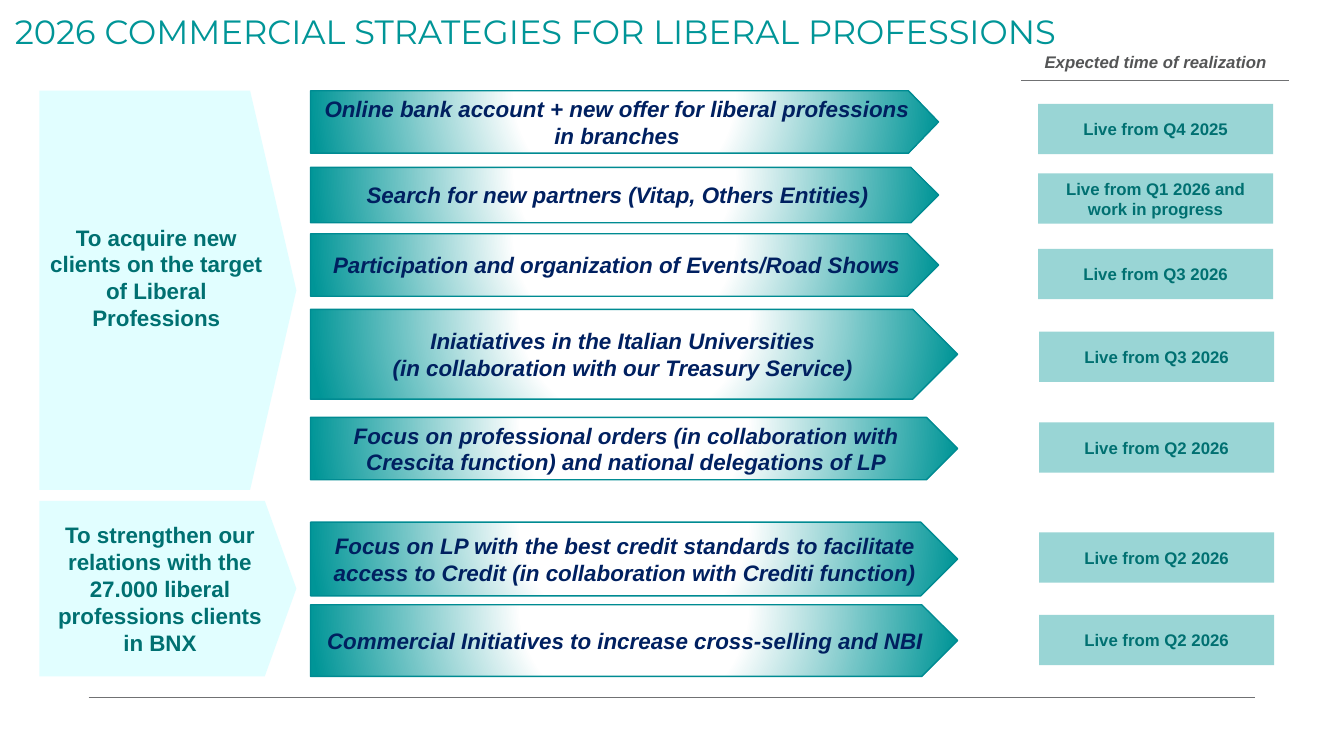
import pptx
import pptx.util
import pptx.dml.color
import pptx.enum.shapes
import pptx.enum.text
import pptx.oxml
import pptx.oxml.ns
import lxml.etree

Pt = pptx.util.Pt
SHAPES = pptx.enum.shapes.MSO_SHAPE
ALIGN = pptx.enum.text.PP_ALIGN
ANCHOR = pptx.enum.text.MSO_ANCHOR

TITLE = "2026 COMMERCIAL STRATEGIES FOR LIBERAL PROFESSIONS"
TIMING_HEADING = "Expected time of realization"

GOALS = [
    ("To acquire new clients on the target of Liberal Professions", 64.8, 285.1, 22),
    ("To strengthen our relations with the 27.000 liberal professions clients in BNX", 357.8, 125.3, 3.6),
]

SHORT, LONG = 448.6, 462.2
INITIATIVES = [
    (["Online bank account + new offer for liberal professions in branches"],
     64.8, 44.6, SHORT, 0.482, "Live from Q4 2025", 74.2),
    (["Search for new partners (Vitap, Others Entities)"],
     119.5, 39.6, SHORT, 0.5, "Live from Q1 2026 and work in progress", 123.8),
    (["Participation and organization of Events/Road Shows"],
     167, 44.6, SHORT, 0.5, "Live from Q3 2026", 177.8),
    (["Iniatiatives in the Italian Universities", "(in collaboration with our Treasury Service)"],
     221, 64.1, LONG, 0.5, "Live from Q3 2026", 236.9),
    (["Focus on professional orders (in collaboration with Crescita function) "
      "and national delegations of LP"],
     298.1, 44.6, LONG, 0.5, "Live from Q2 2026", 301.7),
    (["Focus on LP with the best credit standards to facilitate access to Credit "
      "(in collaboration with Crediti function)"],
     373, 52.6, LONG, 0.5, "Live from Q2 2026", 380.2),
    (["Commercial Initiatives to increase cross-selling and NBI"],
     432, 51.1, LONG, 0.5, "Live from Q2 2026", 439.2),
]
RULES = [(63.4, 896.4, 498.2), (729.4, 920.9, 57.6)]
GRADIENT_STOPS = [(0, "FFFFFF"), (35, "FFFFFF"), (100, "009597")]

TITLE_FONT = {"name": "Montserrat", "size": Pt(24)}
HEADING_FONT = {"name": "Arial", "size": Pt(12), "bold": True, "italic": True}
GOAL_FONT = {"name": "Arial", "size": Pt(16), "bold": True}
INITIATIVE_FONT = {"name": "Arial", "size": Pt(16), "bold": True, "italic": True}
TIMING_FONT = {"name": "Arial", "size": Pt(12), "bold": True}


def paint(color_format, hex_color):
    color_format.rgb = pptx.dml.color.RGBColor.from_string(hex_color)


def write(shape, lines, font, hex_color, insets, align=ALIGN.CENTER, anchor=ANCHOR.MIDDLE):
    frame = shape.text_frame
    left, top, right, bottom = map(Pt, insets)
    layout = {"word_wrap": True, "vertical_anchor": anchor, "margin_left": left,
              "margin_top": top, "margin_right": right, "margin_bottom": bottom}
    for key, value in layout.items():
        setattr(frame, key, value)
    for index, line in enumerate(lines):
        paragraph = frame.add_paragraph() if index else frame.paragraphs[0]
        paragraph.alignment = align
        run = paragraph.add_run()
        run.text = line
        for key, value in font.items():
            setattr(run.font, key, value)
        paint(run.font.color, hex_color)


def add_block(slide, preset, box, fill=None, tip=None):
    block = slide.shapes.add_shape(preset, *map(Pt, box))
    block.shadow.inherit = False
    if tip is not None:
        block.adjustments[0] = tip
    if fill:
        block.fill.solid()
        paint(block.fill.fore_color, fill)
        block.line.fill.background()
    else:
        add_glow(block)
        paint(block.line.color, "008B92")
        block.line.width = Pt(1)
    return block


def add_glow(block):
    stops = "".join(f'<a:gs pos="{pos * 1000}"><a:srgbClr val="{color}"/></a:gs>'
                    for pos, color in GRADIENT_STOPS)
    glow = pptx.oxml.parse_xml(
        f'<a:gradFill {pptx.oxml.ns.nsdecls("a")} rotWithShape="1"><a:gsLst>{stops}</a:gsLst>'
        '<a:path path="circle"><a:fillToRect l="50000" t="-80000" r="50000" b="180000"/>'
        '</a:path></a:gradFill>')
    block.fill.gradient()
    properties = block.element.spPr
    properties.replace(properties.find(pptx.oxml.ns.qn("a:gradFill")), glow)


def add_rule(slide, start, end, y):
    rule = slide.shapes.add_connector(
        pptx.enum.shapes.MSO_CONNECTOR.STRAIGHT, Pt(start), Pt(y), Pt(end), Pt(y))
    paint(rule.line.color, "707173")
    rule.line.width = Pt(0.5)
    lxml.etree.SubElement(rule.element.spPr, pptx.oxml.ns.qn("a:effectLst"))


def main():
    deck = pptx.Presentation()
    deck.slide_width, deck.slide_height = Pt(960), Pt(540)
    slide = deck.slides.add_slide(deck.slide_layouts[6])

    for rule in RULES:
        add_rule(slide, *rule)

    title = slide.shapes.add_textbox(Pt(3.6), Pt(4.3), Pt(949), Pt(36))
    write(title, [TITLE], TITLE_FONT, "009597", (7.2, 3.6, 7.2, 3.6), ALIGN.LEFT, ANCHOR.TOP)
    heading = slide.shapes.add_textbox(Pt(727.9), Pt(36.7), Pt(195.1), Pt(18))
    write(heading, [TIMING_HEADING], HEADING_FONT, "545556", (0, 0, 0, 3.6), anchor=ANCHOR.TOP)

    for goal, top, height, bottom_inset in GOALS:
        arrow = add_block(slide, SHAPES.PENTAGON, (28.1, top, 183.6, height), "E1FEFF", 0.18)
        write(arrow, [goal], GOAL_FONT, "007071", (7.2, 3.6, 7.2, bottom_inset))

    for lines, top, height, width, tip, timing, timing_top in INITIATIVES:
        arrow = add_block(slide, SHAPES.PENTAGON, (221.8, top, width, height), tip=tip)
        write(arrow, lines, INITIATIVE_FONT, "002060", (2.9, 3.6, 2.9, 3.6))
        timing_left = 741.6 if width == SHORT else 742.3
        badge = add_block(slide, SHAPES.RECTANGLE, (timing_left, timing_top, 167.8, 36), "99D5D5")
        write(badge, [timing], TIMING_FONT, "007071", (5.8, 2.9, 5.8, 2.9))

    deck.save("out.pptx")


if __name__ == "__main__":
    main()
